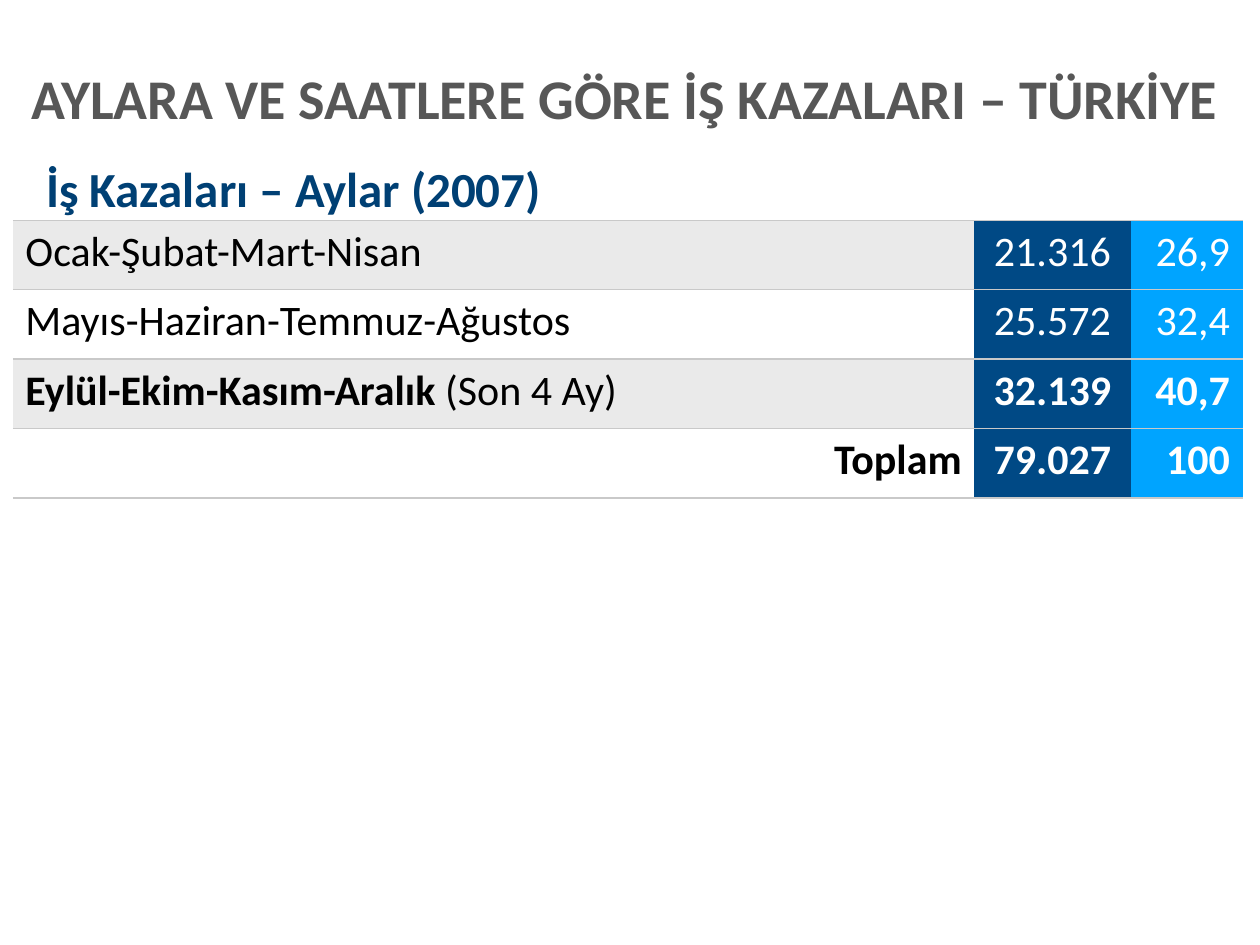
from dataclasses import dataclass

from lxml import etree
from pptx import Presentation
from pptx.dml.color import RGBColor
from pptx.enum.text import MSO_ANCHOR, PP_ALIGN
from pptx.oxml.ns import qn
from pptx.util import Cm, Pt

LEFT, CENTER, RIGHT = PP_ALIGN.LEFT, PP_ALIGN.CENTER, PP_ALIGN.RIGHT
TOP, MIDDLE = MSO_ANCHOR.TOP, MSO_ANCHOR.MIDDLE


@dataclass(frozen=True)
class Theme:
    font: str = "Calibri"
    title_size: int = 32
    subtitle_size: int = 28
    table_size: int = 24
    grey: str = "575757"
    navy: str = "004074"
    black: str = "000000"
    white: str = "FFFFFF"
    band: str = "EAEAEA"
    count_fill: str = "004985"
    percent_fill: str = "00A4FF"
    rule: str = "C9C9C9"


THEME = Theme()

TITLE = "AYLARA VE SAATLERE GÖRE İŞ KAZALARI – TÜRKİYE"
SUBTITLE = "İş Kazaları – Aylar (2007)"
ACCIDENTS = [
    ("Ocak-Şubat-Mart-Nisan", "", "21.316", "26,9", False),
    ("Mayıs-Haziran-Temmuz-Ağustos", "", "25.572", "32,4", False),
    ("Eylül-Ekim-Kasım-Aralık ", "(Son 4 Ay)", "32.139", "40,7", True),
    ("Toplam", "", "79.027", "100", True),
]
COLUMN_WIDTHS = [19.38, 3.15, 2.26]
ROW_HEIGHT = 1.4


def color(code):
    return RGBColor.from_string(code)


def write(paragraph, text, size, code, bold, align=LEFT):
    paragraph.alignment = align
    font = paragraph.font
    font.name, font.size, font.bold = THEME.font, Pt(size), bold
    font.color.rgb = color(code)
    paragraph.add_run().text = text


def add_heading(slide, box, text, size, code, anchor=TOP, side_inset=0.25):
    frame = slide.shapes.add_textbox(*map(Cm, box)).text_frame
    frame.word_wrap = True
    frame.vertical_anchor = anchor
    frame.margin_left = frame.margin_right = Cm(side_inset)
    paragraph = frame.paragraphs[0]
    write(paragraph, text, size, code, True)
    return paragraph


def rule_cell(cell):
    properties = cell._tc.get_or_add_tcPr()
    for position, side in enumerate(("lnL", "lnR", "lnT", "lnB")):
        line = etree.Element(qn(f"a:{side}"), w=str(Pt(1)))
        if side in ("lnT", "lnB"):
            fill = etree.SubElement(line, qn("a:solidFill"))
            etree.SubElement(fill, qn("a:srgbClr"), val=THEME.rule)
        else:
            etree.SubElement(line, qn("a:noFill"))
        properties.insert(position, line)


def fill_cell(cell, text, fill, code, bold, align):
    cell.fill.solid()
    cell.fill.fore_color.rgb = color(fill)
    rule_cell(cell)
    paragraph = cell.text_frame.paragraphs[0]
    write(paragraph, text, THEME.table_size, code, bold, align)
    return paragraph


def add_accidents(slide):
    table = slide.shapes.add_table(
        len(ACCIDENTS), len(COLUMN_WIDTHS), Cm(0.26), Cm(4.44),
        Cm(sum(COLUMN_WIDTHS)), Cm(ROW_HEIGHT * len(ACCIDENTS))).table
    table.first_row = table.horz_banding = False
    for column, width in zip(table.columns, COLUMN_WIDTHS):
        column.width = Cm(width)
    for index, (months, note, count, percent, bold) in enumerate(ACCIDENTS):
        table.rows[index].height = Cm(ROW_HEIGHT)
        is_total = index == len(ACCIDENTS) - 1
        band = THEME.white if index % 2 else THEME.band
        label = fill_cell(table.cell(index, 0), months, band, THEME.black,
                          bold, RIGHT if is_total else LEFT)
        if note:
            remark = label.add_run()
            remark.text = note
            remark.font.bold = False
        fill_cell(table.cell(index, 1), count, THEME.count_fill, THEME.white, bold, CENTER)
        fill_cell(table.cell(index, 2), percent, THEME.percent_fill, THEME.white, bold, RIGHT)


def main():
    deck = Presentation()
    deck.slide_width, deck.slide_height = Cm(25.4), Cm(19.05)
    slide = deck.slides.add_slide(deck.slide_layouts[6])
    add_accidents(slide)
    add_heading(slide, (0.68, 3.07, 13.18, 1.45), SUBTITLE, THEME.subtitle_size, THEME.navy)
    title = add_heading(slide, (0.64, 1.14, 24.49, 1.8), TITLE, THEME.title_size,
                        THEME.grey, anchor=MIDDLE, side_inset=0)
    title.line_spacing = 0.9
    deck.save("out.pptx")


if __name__ == "__main__":
    main()
